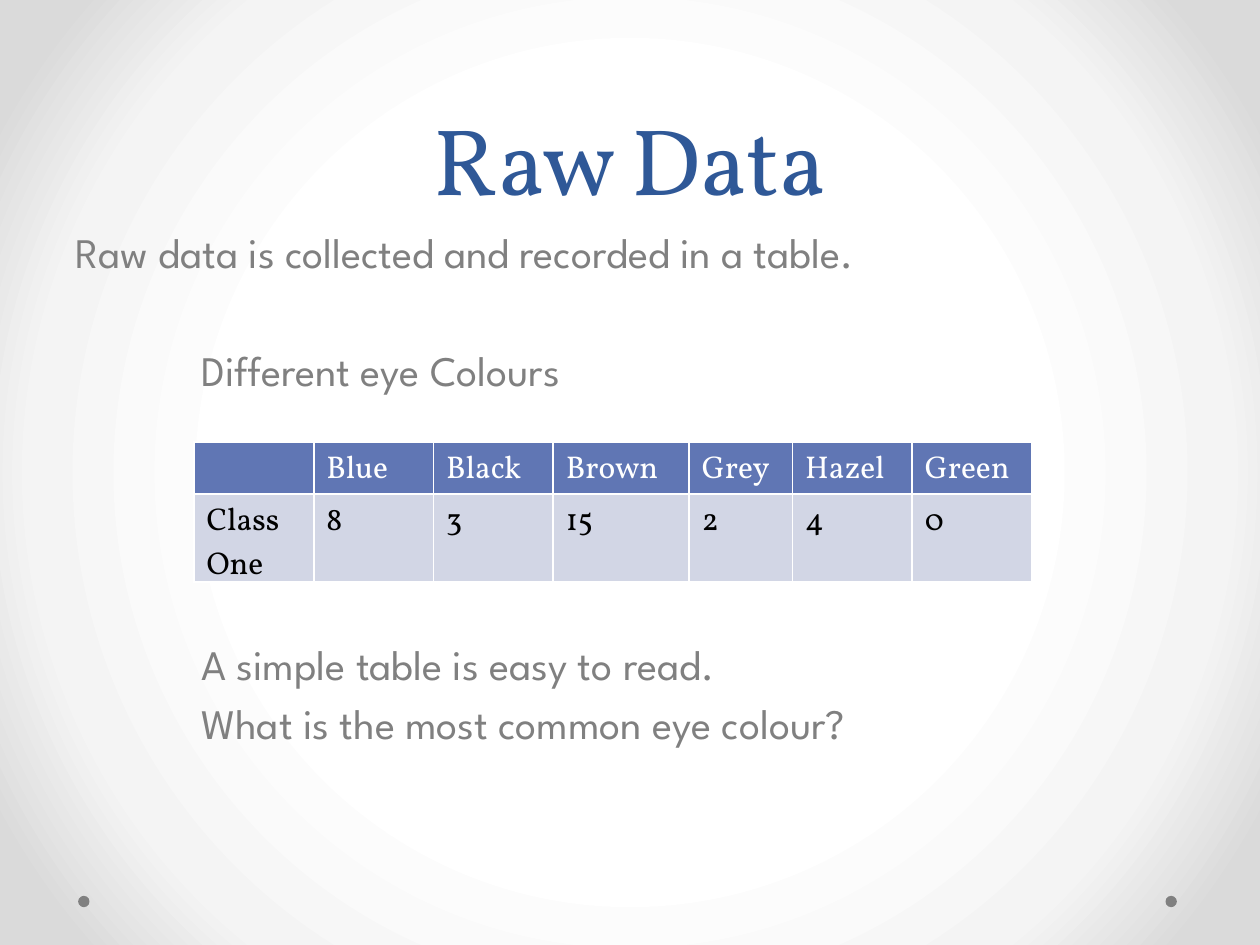
from lxml import etree
from pptx import Presentation
from pptx.dml.color import RGBColor
from pptx.enum.shapes import MSO_SHAPE
from pptx.enum.text import MSO_ANCHOR, PP_ALIGN
from pptx.oxml import parse_xml
from pptx.oxml.ns import qn
from pptx.util import Inches, Pt

OVAL = MSO_SHAPE.OVAL
BOTTOM, TOP = MSO_ANCHOR.BOTTOM, MSO_ANCHOR.TOP
CENTER, LEFT = PP_ALIGN.CENTER, PP_ALIGN.LEFT
HEADING_FONT, BODY_FONT = "Vollkorn", "League Spartan"
DRAWING_NS = "http://schemas.openxmlformats.org/drawingml/2006/main"

COLORS = {
    "title": "2F5897",
    "grey": "808080",
    "header": "6076B4",
    "row": "D2D6E5",
    "white": "FFFFFF",
    "black": "000000",
}

# Content
TITLE = "Raw Data"
# Text, left indent in inches, number of open lines above
BODY_LINES = [
    ("Raw data is collected and recorded in a table.", 0, 0),
    ("Different eye Colours", 1, 1),
    ("A simple table is easy to read.", 1, 4),
    ("What is the most common eye colour?", 1, 0),
]
EYE_COLOURS = [
    ["", "Blue", "Black", "Brown", "Grey", "Hazel", "Green"],
    ["Class One", "8", "3", "15", "2", "4", "0"],
]
COLUMN_WIDTHS = [0.95, 0.95, 0.95, 1.08, 0.82, 0.95, 0.95]
ROW_HEIGHTS = [0.41, 0.7]
BACKGROUND_STOPS = [(50, "FFFFFF"), (76, "F4F4F4"), (92, "DADADA")]
DOT_LEFTS = [0.62, 9.25]
DOT_TOP, DOT_SIZE = 7.11, 0.09
LINE_PITCH, PARAGRAPH_GAP = 33.6, 4.8


def rgb(name):
    return RGBColor.from_string(COLORS[name])


def write(paragraph, text, *, font, size, color, align=LEFT, indent=0,
          before=0, line_spacing=None):
    paragraph.alignment = align
    paragraph.space_before = Pt(before)
    if line_spacing:
        paragraph.line_spacing = Pt(line_spacing)
    if indent:
        paragraph._p.get_or_add_pPr().set("marL", str(Inches(indent)))
    run = paragraph.add_run()
    run.text = text
    run.font.name = font
    run.font.size = Pt(size)
    run.font.color.rgb = rgb(color)


def add_frame(slide, left, top, width, height, anchor=TOP):
    box = slide.shapes.add_textbox(
        Inches(left), Inches(top), Inches(width), Inches(height))
    box.text_frame.word_wrap = True
    box.text_frame.vertical_anchor = anchor
    return box.text_frame


def set_background(slide):
    fill = slide.background.fill
    fill.solid()
    stops = "".join(
        f'<a:gs pos="{position * 1000}"><a:srgbClr val="{color}"/></a:gs>'
        for position, color in BACKGROUND_STOPS)
    gradient = parse_xml(
        f'<a:gradFill xmlns:a="{DRAWING_NS}" rotWithShape="1">'
        f'<a:gsLst>{stops}</a:gsLst><a:path path="circle">'
        '<a:fillToRect l="50000" t="50000" r="50000" b="50000"/>'
        '</a:path></a:gradFill>')
    solid = slide.background._cSld.find(".//" + qn("a:solidFill"))
    solid.getparent().replace(solid, gradient)


def set_borders(cell, width=1):
    properties = cell._tc.get_or_add_tcPr()
    for index, side in enumerate(("lnL", "lnR", "lnT", "lnB")):
        line = etree.Element(qn(f"a:{side}"), w=str(Pt(width)))
        fill = etree.SubElement(line, qn("a:solidFill"))
        etree.SubElement(fill, qn("a:srgbClr"), val=COLORS["white"])
        properties.insert(index, line)


def add_eye_colour_table(slide):
    table = slide.shapes.add_table(
        len(EYE_COLOURS), len(COLUMN_WIDTHS), Inches(1.54), Inches(3.51),
        Inches(sum(COLUMN_WIDTHS)), Inches(sum(ROW_HEIGHTS))).table
    for column, width in zip(table.columns, COLUMN_WIDTHS):
        column.width = Inches(width)
    for row, height in zip(table.rows, ROW_HEIGHTS):
        row.height = Inches(height)
    styles = [("header", "white"), ("row", "black")]
    for r, (values, (fill, color)) in enumerate(zip(EYE_COLOURS, styles)):
        for c, value in enumerate(values):
            cell = table.cell(r, c)
            cell.fill.solid()
            cell.fill.fore_color.rgb = rgb(fill)
            set_borders(cell)
            if value:
                write(cell.text_frame.paragraphs[0], value,
                      font=HEADING_FONT, size=18, color=color)


def main():
    presentation = Presentation()
    presentation.slide_width = Inches(10)
    presentation.slide_height = Inches(7.5)
    slide = presentation.slides.add_slide(presentation.slide_layouts[6])
    set_background(slide)

    # Corner dots
    for left in DOT_LEFTS:
        dot = slide.shapes.add_shape(
            OVAL, Inches(left), Inches(DOT_TOP),
            Inches(DOT_SIZE), Inches(DOT_SIZE))
        dot.shadow.inherit = False
        dot.fill.solid()
        dot.fill.fore_color.rgb = rgb("grey")
        dot.line.fill.background()

    # Title
    title = add_frame(slide, 0.5, 0, 9, 1.75, anchor=BOTTOM)
    write(title.paragraphs[0], TITLE, font=HEADING_FONT, size=54,
          color="title", align=CENTER, line_spacing=58)

    # Body text, with room left for the table
    body = add_frame(slide, 0.5, 1.75, 9, 4.95)
    for index, (text, indent, open_lines) in enumerate(BODY_LINES):
        paragraph = body.add_paragraph() if index else body.paragraphs[0]
        write(paragraph, text, font=BODY_FONT, size=24, color="grey",
              indent=indent, before=PARAGRAPH_GAP + open_lines * LINE_PITCH)

    add_eye_colour_table(slide)
    presentation.save("out.pptx")


if __name__ == "__main__":
    main()
